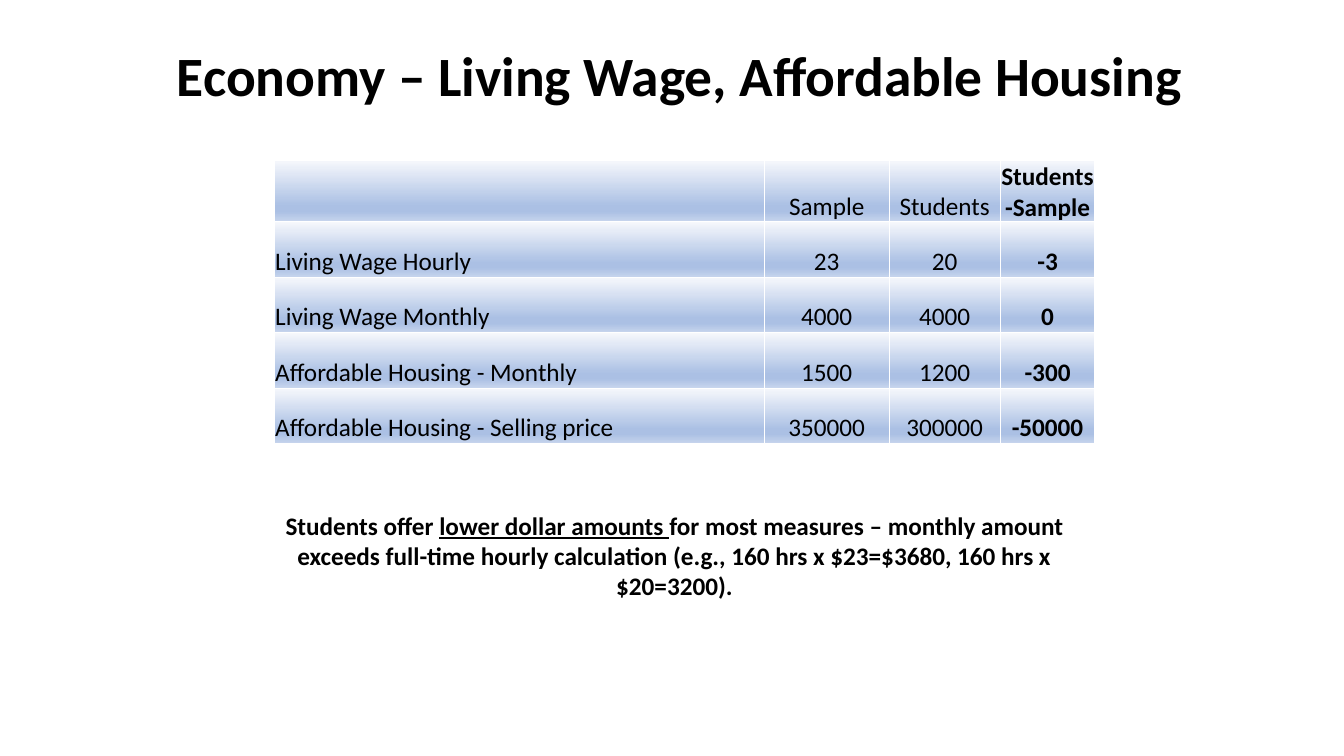
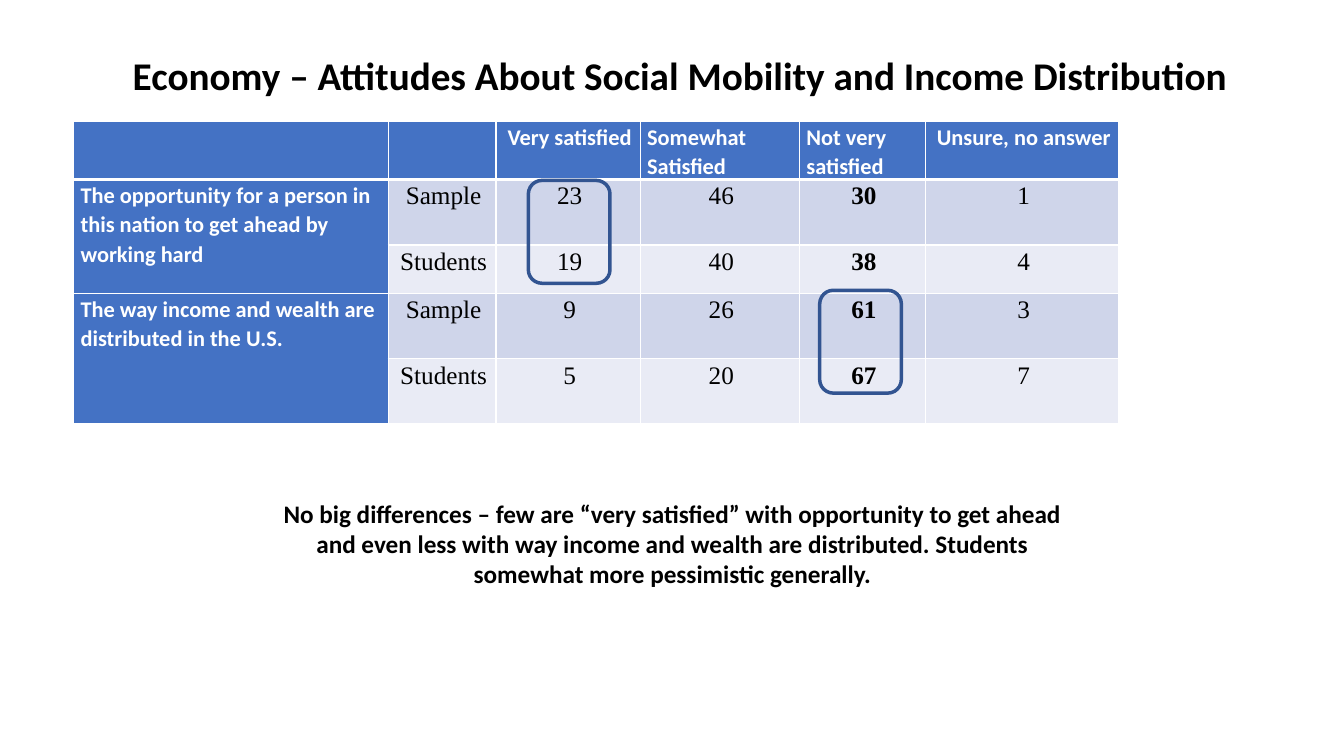
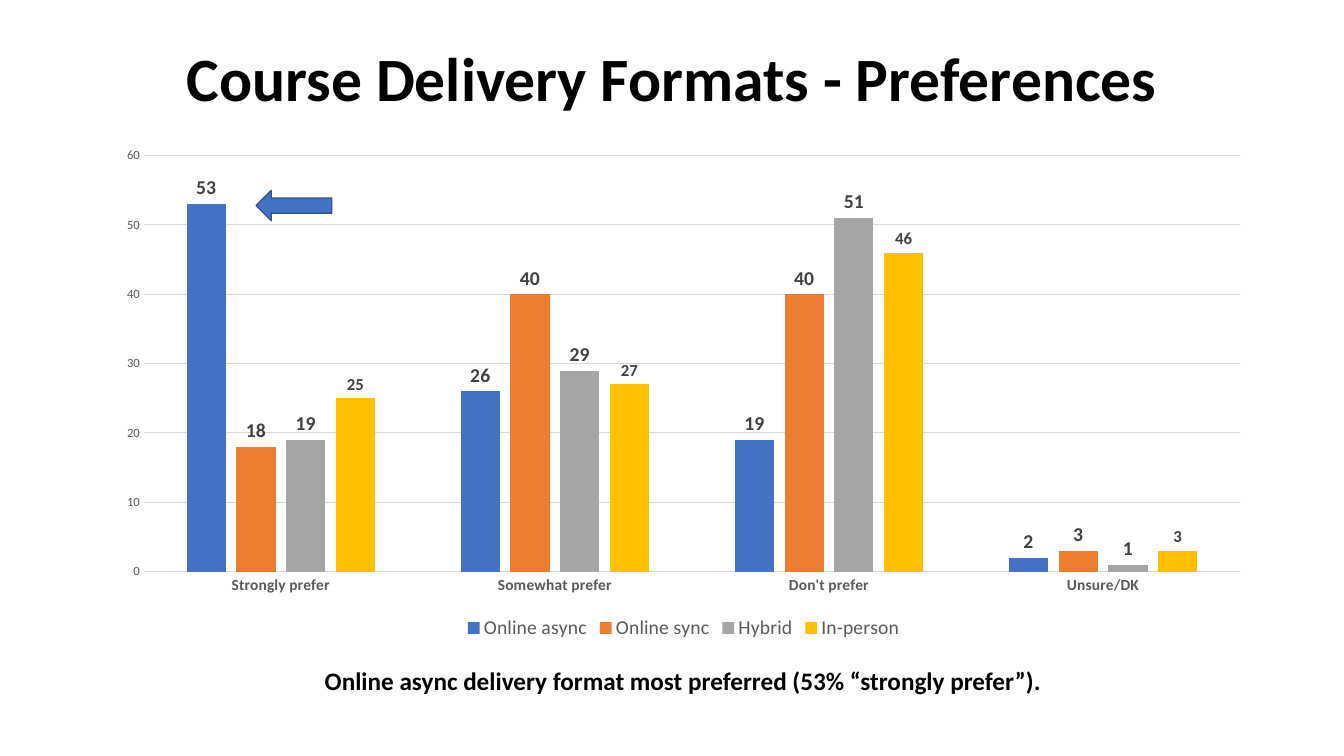
"""Builds three survey result slides on economy attitudes and course formats."""
from typing import NamedTuple

from lxml.etree import SubElement
from pptx import Presentation
from pptx.chart.data import CategoryChartData
from pptx.dml.color import RGBColor
from pptx.enum.chart import XL_CHART_TYPE, XL_LABEL_POSITION, XL_LEGEND_POSITION, XL_TICK_MARK
from pptx.enum.shapes import MSO_SHAPE
from pptx.enum.text import MSO_ANCHOR, PP_ALIGN
from pptx.oxml.ns import qn
from pptx.util import Emu, Pt

BLACK = RGBColor(0x00, 0x00, 0x00)
WHITE = RGBColor(0xFF, 0xFF, 0xFF)
BLUE = RGBColor(0x44, 0x72, 0xC4)
NAVY = RGBColor(0x32, 0x54, 0x91)
ORANGE = RGBColor(0xED, 0x7D, 0x31)
GREY = RGBColor(0xA5, 0xA5, 0xA5)
GOLD = RGBColor(0xFF, 0xC0, 0x00)
BAND_DARK = RGBColor(0xCF, 0xD5, 0xEA)
BAND_LIGHT = RGBColor(0xE9, 0xEB, 0xF5)
GRID = RGBColor(0xD9, 0xD9, 0xD9)
AXIS_TEXT = RGBColor(0x59, 0x59, 0x59)
LABEL_TEXT = RGBColor(0x40, 0x40, 0x40)
SHEEN = (
    (0, RGBColor(0xF6, 0xF8, 0xFC)),
    (74, RGBColor(0xAB, 0xC0, 0xE4)),
    (83, RGBColor(0xAB, 0xC0, 0xE4)),
    (100, RGBColor(0xC7, 0xD5, 0xED)),
)

PX = 9144
SANS = "Calibri"
SERIF = "Times New Roman"


class Style(NamedTuple):
    """Character style of a run or a chart text."""

    size: float = 18
    color: RGBColor = BLACK
    bold: bool = False
    name: str = SANS
    underline: bool = False

    def apply(self, font):
        """Set this style on a font."""
        font.size = Pt(self.size)
        font.name = self.name
        font.bold = self.bold
        font.color.rgb = self.color
        if self.underline:
            font.underline = True


PLAIN = Style()
STRONG = Style(bold=True)
HEADING = Style(16, WHITE, True)
FIGURE = Style(name=SERIF)
STRONG_FIGURE = Style(name=SERIF, bold=True)


def px(*lengths):
    """Turn px into EMU."""
    return [Emu(length * PX) for length in lengths]


class Deck:
    """Holds the presentation, its style and the current slide."""

    def __init__(self):
        """Start an empty widescreen presentation."""
        self.show = Presentation()
        self.show.slide_width, self.show.slide_height = px(1333, 750)
        self.shapes = None

    def page(self, title, size, at=(99, 45, 1150, 65)):
        """Add a slide with its title."""
        self.shapes = self.show.slides.add_slide(self.show.slide_layouts[6]).shapes
        self.text(at, [(title, Style(size, bold=True))], MSO_ANCHOR.MIDDLE, 0.9)

    def add_spans(self, frame, spans, align, spacing):
        """Add styled runs, starting a paragraph at each line end."""
        para = frame.paragraphs[0]
        for words, style in spans:
            for number, line in enumerate(words.split("\n")):
                if number:
                    para = frame.add_paragraph()
                para.alignment = align
                para.line_spacing = spacing
                span = para.add_run()
                span.text = line
                style.apply(span.font)

    def text(self, at, spans, anchor=MSO_ANCHOR.TOP, spacing=1.0):
        """Add a centred text box."""
        frame = self.shapes.add_textbox(*px(*at)).text_frame
        frame.word_wrap = True
        frame.vertical_anchor = anchor
        self.add_spans(frame, spans, PP_ALIGN.CENTER, spacing)

    def shape(self, kind, at, width, fill=None):
        """Add an outlined preset shape."""
        box = self.shapes.add_shape(kind, *px(*at))
        box.shadow.inherit = False
        box.line.color.rgb = NAVY
        box.line.width = Pt(width)
        if fill is None:
            box.fill.background()
        else:
            box.fill.solid()
            box.fill.fore_color.rgb = fill

    def table(self, left, top, widths, heights):
        """Add a plain table with the given column widths and row heights."""
        at = px(left, top, sum(widths), sum(heights))
        table = self.shapes.add_table(len(heights), len(widths), *at).table
        table.first_row = table.horz_banding = False
        for column, width in zip(table.columns, px(*widths)):
            column.width = width
        for row, height in zip(table.rows, px(*heights)):
            row.height = height
        return table

    def cell(self, cell, words, style, align, insets, fill,
             anchor=MSO_ANCHOR.TOP, spacing=1.0, top=1, bottom=1):
        """Fill, border and label one table cell."""
        properties = cell._tc.get_or_add_tcPr()
        for side, width in (("L", 1), ("R", 1), ("T", top), ("B", bottom)):
            line = SubElement(properties, qn(f"a:ln{side}"), w=str(Pt(width)))
            self.color(SubElement(line, qn("a:solidFill")), WHITE)
        if fill is SHEEN:
            gradient = SubElement(properties, qn("a:gradFill"), rotWithShape="1")
            stops = SubElement(gradient, qn("a:gsLst"))
            for position, color in SHEEN:
                self.color(SubElement(stops, qn("a:gs"), pos=str(position * 1000)), color)
            SubElement(gradient, qn("a:lin"), ang="5400000", scaled="0")
        else:
            cell.fill.solid()
            cell.fill.fore_color.rgb = fill
        cell.margin_left, cell.margin_top, cell.margin_right, cell.margin_bottom = px(*insets)
        cell.vertical_anchor = anchor
        if words:
            self.add_spans(cell.text_frame, [(words, style)], align, spacing)

    def color(self, parent, color):
        """Add a colour element."""
        SubElement(parent, qn("a:srgbClr"), val=str(color))

    def chart(self, at, categories, series):
        """Add a clustered column chart with value labels."""
        data = CategoryChartData()
        data.categories = categories
        for name, values, *_ in series:
            data.add_series(name, values)
        chart = self.shapes.add_chart(XL_CHART_TYPE.COLUMN_CLUSTERED, *px(*at), data).chart
        chart.has_title = False
        Style(10).apply(chart.font)
        chart.has_legend = True
        chart.legend.position = XL_LEGEND_POSITION.BOTTOM
        chart.legend.include_in_layout = False
        Style(14, AXIS_TEXT).apply(chart.legend.font)
        plot = chart.plots[0]
        plot.gap_width, plot.overlap = 219, -27
        plot.vary_by_categories = False
        for bars, (_, _, color, size) in zip(plot.series, series):
            bars.format.fill.solid()
            bars.format.fill.fore_color.rgb = color
            labels = bars.data_labels
            labels.show_value = True
            labels.position = XL_LABEL_POSITION.OUTSIDE_END
            Style(size, LABEL_TEXT, True).apply(labels.font)
        self.axes(chart.category_axis, chart.value_axis)

    def axes(self, category_axis, value_axis):
        """Style both chart axes."""
        for axis, style in ((category_axis, Style(11, AXIS_TEXT, True)),
                            (value_axis, Style(9, AXIS_TEXT))):
            axis.major_tick_mark = axis.minor_tick_mark = XL_TICK_MARK.NONE
            style.apply(axis.tick_labels.font)
        value_axis.minimum_scale, value_axis.maximum_scale, value_axis.major_unit = 0, 60, 10
        value_axis.has_major_gridlines = True
        for line in (category_axis.format.line, value_axis.major_gridlines.format.line):
            line.color.rgb = GRID
            line.width = Pt(0.75)
        value_axis.format.line.fill.background()


def living_wage(deck):
    """Build the living wage slide."""
    deck.page("Economy – Living Wage, Affordable Housing", 39.6)
    deck.text((252, 501, 834, 101), [
        ("Students offer ", STRONG),
        ("lower dollar amounts ", Style(bold=True, underline=True)),
        ("for most measures – monthly amount exceeds full-time hourly calculation "
         "(e.g., 160 hrs x $23=$3680, 160 hrs x $20=3200).", STRONG),
    ])
    rows = (
        ("", "Sample", "Students", "Students-Sample"),
        ("Living Wage Hourly", "23", "20", "-3"),
        ("Living Wage Monthly", "4000", "4000", "0"),
        ("Affordable Housing - Monthly", "1500", "1200", "-300"),
        ("Affordable Housing - Selling price", "350000", "300000", "-50000"),
    )
    table = deck.table(272, 159, (486, 124, 110, 94), (59, 55, 55, 55, 55))
    for row, texts in enumerate(rows):
        for column, words in enumerate(texts):
            deck.cell(table.cell(row, column), words, STRONG if column == 3 else PLAIN,
                      PP_ALIGN.CENTER if column else PP_ALIGN.LEFT,
                      (1, 1, 1, 0), SHEEN, MSO_ANCHOR.BOTTOM)


def social_mobility(deck):
    """Build the social mobility slide."""
    deck.page("Economy – Attitudes About Social Mobility and Income Distribution", 28)
    deck.text((250, 489, 834, 101), [
        ("No big differences – few are “very satisfied” with opportunity to get ahead "
         "and even less with way income and wealth are distributed. "
         "Students somewhat more pessimistic generally.", STRONG),
    ])
    rows = (
        ("", "", "Very satisfied", "Somewhat\nSatisfied", "Not very satisfied",
         "Unsure, no answer"),
        ("The opportunity for a person in this nation to get ahead by working hard",
         "Sample", "23", "46", "30", "1"),
        ("", "Students", "19", "40", "38", "4"),
        ("The way income and wealth are distributed in the U.S.",
         "Sample", "9", "26", "61", "3"),
        ("", "Students", "5", "20", "67", "7"),
    )
    table = deck.table(73, 120, (312, 107, 143, 158, 125, 192), (57, 65, 48, 65, 64))
    for row, texts in enumerate(rows):
        for column, words in enumerate(texts):
            heading = row == 0 or column == 0
            left = column == 0 or row == 0 and column in (3, 4)
            figure = STRONG_FIGURE if column == 4 else FIGURE
            band = BAND_DARK if row % 2 else BAND_LIGHT
            deck.cell(table.cell(row, column), words, HEADING if heading else figure,
                      PP_ALIGN.LEFT if left else PP_ALIGN.CENTER, (7, 1, 4, 0),
                      BLUE if heading else band, spacing=1.07,
                      top=3 if row == 1 else 1, bottom=1 if row else 3)
    for row in (1, 3):
        table.cell(row, 0).merge(table.cell(row + 1, 0))
    for left, top in ((524, 179), (813, 288)):
        deck.shape(MSO_SHAPE.ROUNDED_RECTANGLE, (left, top, 81, 102), 2.5)


def course_formats(deck):
    """Build the course delivery slide."""
    deck.page("Course Delivery Formats - Preferences", 44, (92, 40, 1150, 81))
    deck.chart((103, 137, 1150, 502),
               ("Strongly prefer", "Somewhat prefer", "Don't prefer", "Unsure/DK"), (
                   ("Online async", (53, 26, 19, 2), BLUE, 14),
                   ("Online sync", (18, 40, 40, 3), ORANGE, 14),
                   ("Hybrid", (19, 29, 51, 1), GREY, 14),
                   ("In-person", (25, 27, 46, 3), GOLD, 12),
               ))
    deck.text((160, 655, 1035, 40), [
        ("Online async delivery format most preferred (53% “strongly prefer”).", STRONG),
    ])
    deck.shape(MSO_SHAPE.LEFT_ARROW, (254, 189, 75, 30), 1, BLUE)


def main():
    """Build and save the deck."""
    deck = Deck()
    living_wage(deck)
    social_mobility(deck)
    course_formats(deck)
    deck.show.save("out.pptx")


if __name__ == "__main__":
    main()
